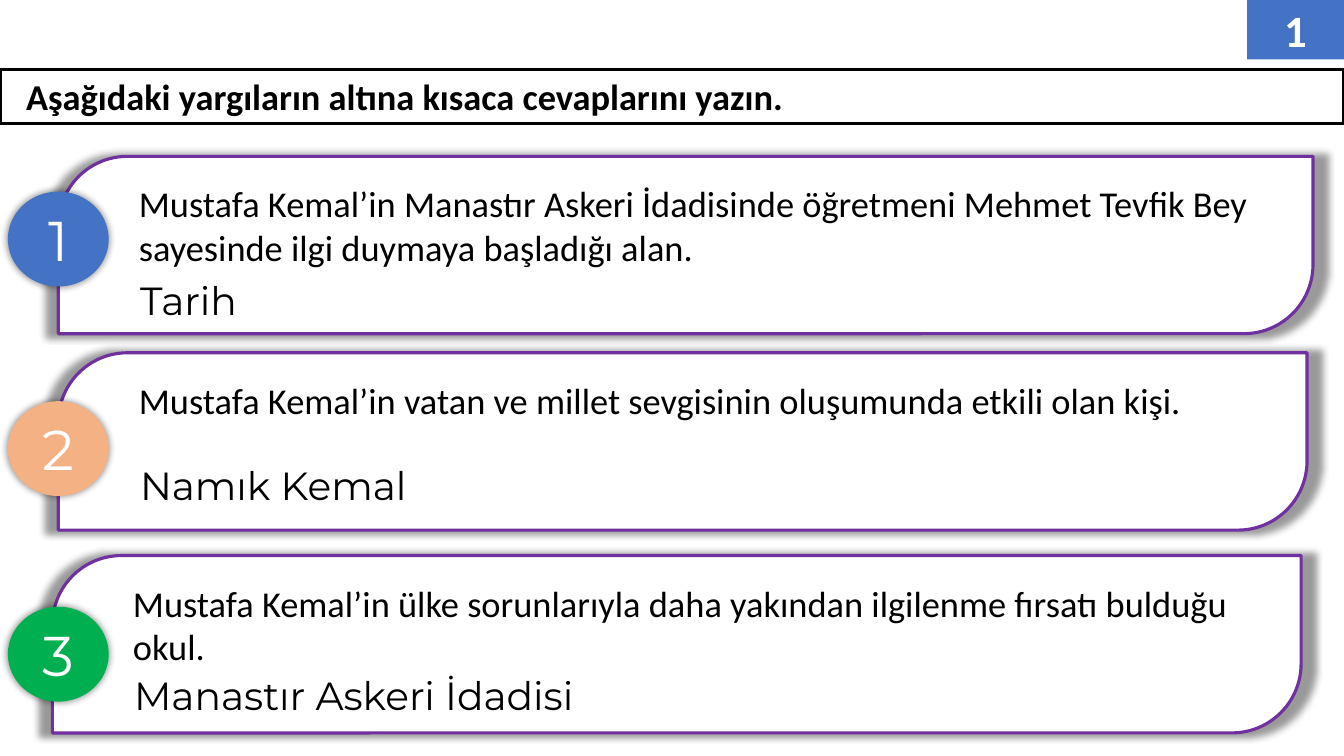
import pptx
import pptx.util
import pptx.dml.color
import pptx.enum.shapes
import pptx.enum.text
import pptx.oxml

Cm, Pt = pptx.util.Cm, pptx.util.Pt
RGBColor = pptx.dml.color.RGBColor
Kind = pptx.enum.shapes.MSO_SHAPE
Align = pptx.enum.text.PP_ALIGN
Anchor = pptx.enum.text.MSO_ANCHOR
Fit = pptx.enum.text.MSO_AUTO_SIZE

BLACK = RGBColor(0x00, 0x00, 0x00)
WHITE = RGBColor(0xFF, 0xFF, 0xFF)
BLUE = RGBColor(0x44, 0x72, 0xC4)
PEACH = RGBColor(0xF4, 0xB1, 0x83)
GREEN = RGBColor(0x00, 0xB0, 0x50)
PURPLE = RGBColor(0x70, 0x30, 0xA0)

WIDE, HIGH = 33.87, 19.05
TITLE = "Aşağıdaki yargıların altına kısaca cevaplarını yazın."
PAGE = "1"

# question, answer, badge colour, card (left, top, width), badge top, answer (top, width)
CARDS = [
    ("Mustafa Kemal’in Manastır Askeri İdadisinde öğretmeni Mehmet Tevfik Bey "
     "sayesinde ilgi duymaya başladığı alan.",
     "Tarih", BLUE, (1.47, 3.94, 31.62), 4.83, (6.83, 3.28)),
    ("Mustafa Kemal’in vatan ve millet sevgisinin oluşumunda etkili olan kişi.",
     "Namık Kemal", PEACH, (1.47, 8.89, 31.47), 10.11, (11.51, 7.8)),
    ("Mustafa Kemal’in ülke sorunlarıyla daha yakından ilgilenme fırsatı bulduğu okul.",
     "Manastır Askeri İdadisi", GREEN, (1.32, 14.0, 31.47), 15.29, (16.79, 13.06)),
]
CARD_HIGH = 4.47
BADGE = (0.2, 2.54, 2.39)  # left, width, height
SHIFT = 1.81  # answer's left edge from the card's
ANSWER_HIGH = 1.45

HEAD = {"name": "Calibri", "size": Pt(26), "bold": True}
CORNER = {"name": "Calibri", "size": Pt(32), "bold": True}
ASK = {"name": "Calibri", "size": Pt(26)}
REPLY = {"name": "Montserrat", "size": Pt(28)}
DIGIT = {"name": "Montserrat", "size": Pt(40)}

LEFT = {"vertical_anchor": Anchor.TOP, "word_wrap": True}
MID = {"vertical_anchor": Anchor.MIDDLE, "word_wrap": True}

GLOW = (
    '<a:effectLst xmlns:a="http://schemas.openxmlformats.org/drawingml/2006/main">'
    '<a:outerShdw blurRad="63500" sx="102000" sy="102000" algn="ctr" rotWithShape="0">'
    '<a:prstClr val="black"><a:alpha val="40000"/></a:prstClr>'
    '</a:outerShdw></a:effectLst>')


def write(shape, text, font, color, frame, align=Align.LEFT):
    body = shape.text_frame
    for key, val in frame.items():
        setattr(body, key, val)
    para = body.paragraphs[0]
    para.alignment = align
    run = para.add_run()
    run.text = text
    for key, val in font.items():
        setattr(run.font, key, val)
    run.font.color.rgb = color


def draw(slide, kind, box, fill=None, line=None, glow=False):
    shape = slide.shapes.add_shape(kind, *map(Cm, box))
    shape.shadow.inherit = False
    if fill is None:
        shape.fill.background()
    else:
        shape.fill.solid()
        shape.fill.fore_color.rgb = fill
    if line is None:
        shape.line.fill.background()
    else:
        shape.line.color.rgb = line
        shape.line.width = Pt(2.25)
    if glow:
        props = shape._element.spPr
        props.replace(props.effectLst, pptx.oxml.parse_xml(GLOW)) if hasattr(
            props, "effectLst") else props.append(pptx.oxml.parse_xml(GLOW))
    return shape


def main():
    deck = pptx.Presentation()
    deck.slide_width, deck.slide_height = Cm(WIDE), Cm(HIGH)
    slide = deck.slides.add_slide(deck.slide_layouts[6])

    bar = draw(slide, Kind.RECTANGLE, (0, 1.75, WIDE, 1.37), line=BLACK)
    write(bar, TITLE, HEAD, BLACK, {**LEFT, "margin_left": Cm(0.66)})
    tab = draw(slide, Kind.RECTANGLE, (WIDE - 2.44, 0, 2.44, 1.5), BLUE)
    write(tab, PAGE, CORNER, WHITE, MID, Align.CENTER)

    for ask, _, _, place, _, _ in CARDS:
        card = draw(slide, Kind.ROUND_2_DIAG_RECTANGLE, (*place, CARD_HIGH),
                    WHITE, PURPLE, True)
        card.adjustments[0], card.adjustments[1] = 0.39, 0
        write(card, ask, ASK, BLACK, {**LEFT, "margin_left": Cm(1.52)})

    left, wide, high = BADGE
    for num, (_, _, color, _, top, _) in enumerate(CARDS, 1):
        badge = draw(slide, Kind.OVAL, (left, top, wide, high), color, glow=True)
        write(badge, str(num), DIGIT, WHITE, MID, Align.CENTER)

    for _, reply, _, place, _, (top, wide) in CARDS:
        box = slide.shapes.add_textbox(
            *map(Cm, (place[0] + SHIFT, top, wide, ANSWER_HIGH)))
        write(box, reply, REPLY, BLACK,
              {"word_wrap": False, "auto_size": Fit.SHAPE_TO_FIT_TEXT})

    deck.save("out.pptx")


if __name__ == "__main__":
    main()
